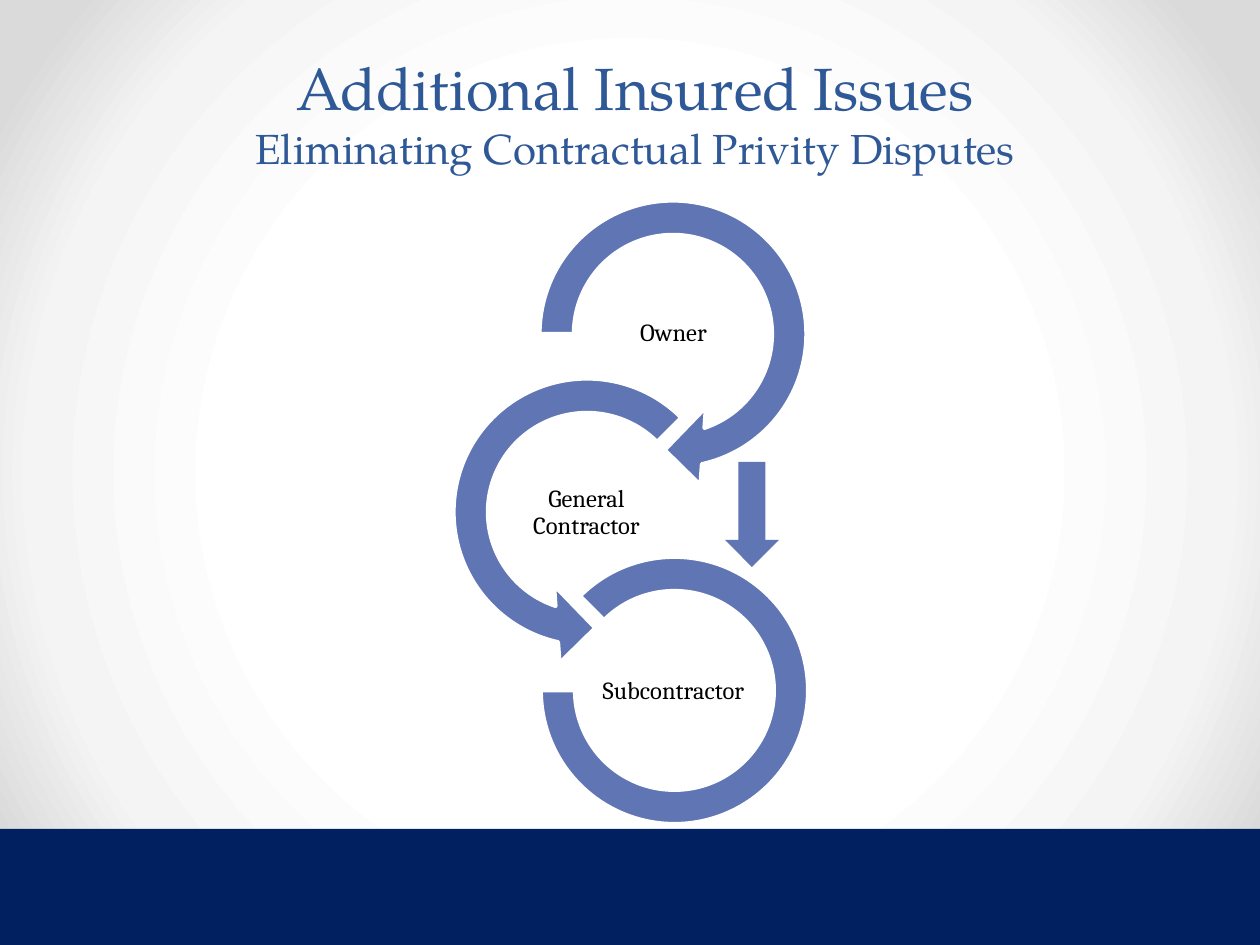
from lxml.etree import SubElement
from pptx import Presentation
from pptx.dml.color import RGBColor
from pptx.enum.shapes import MSO_SHAPE as Shape
from pptx.enum.text import MSO_ANCHOR as Anchor, PP_ALIGN as Align
from pptx.oxml.ns import qn
from pptx.util import Pt

EMU_PER_PX = 914400 / 126
NAVY = RGBColor(0x00, 0x20, 0x60)
TITLE_BLUE = RGBColor(0x2F, 0x58, 0x97)
ARROW_BLUE = RGBColor(0x60, 0x76, 0xB4)
WHITE = RGBColor(0xFF, 0xFF, 0xFF)
BLACK = RGBColor(0x00, 0x00, 0x00)
PALE_GRAY = RGBColor(0xF4, 0xF4, 0xF4)
GRAY = RGBColor(0xDA, 0xDA, 0xDA)


def px(length):
    return round(length * EMU_PER_PX)


class SlideBuilder:
    title_font = "TeX Gyre Pagella"
    label_font = "Cambria"

    def __init__(self, page):
        self.page = page

    def radial_background(self, stops):
        self.page.background.fill.gradient()
        gradient = self.page.element.find(".//" + qn("a:gradFill"))
        for child in list(gradient):
            gradient.remove(child)
        stop_list = SubElement(gradient, qn("a:gsLst"))
        for percent, color in stops:
            stop = SubElement(stop_list, qn("a:gs"), pos=str(percent * 1000))
            SubElement(stop, qn("a:srgbClr"), val=str(color))
        circle = SubElement(gradient, qn("a:path"), path="circle")
        SubElement(circle, qn("a:fillToRect"),
                   {side: "50000" for side in ("l", "t", "r", "b")})

    def shape(self, kind, left, top, width, height, fill, adjustments=(), outlined=False):
        shape = self.page.shapes.add_shape(kind, px(left), px(top), px(width), px(height))
        shape.shadow.inherit = False
        shape.fill.solid()
        shape.fill.fore_color.rgb = fill
        if outlined:
            shape.line.color.rgb = WHITE
            shape.line.width = Pt(2.25)
        else:
            shape.line.fill.background()
        for index, value in enumerate(adjustments):
            shape.adjustments[index] = value

    def text(self, words, left, top, width, height, font, sizes, color,
             anchor=Anchor.MIDDLE, margin=None, spacing=None):
        box = self.page.shapes.add_textbox(px(left), px(top), px(width), px(height))
        frame = box.text_frame
        frame.word_wrap = True
        frame.vertical_anchor = anchor
        if margin is not None:
            frame.margin_left = frame.margin_right = px(margin)
            frame.margin_top = frame.margin_bottom = px(margin)
        para = frame.paragraphs[0]
        para.text = words
        para.alignment = Align.CENTER
        para.line_spacing = spacing
        for span, size in zip(para.runs, sizes):
            span.font.name = font
            span.font.size = Pt(size)
            span.font.color.rgb = color

    def title(self, words, left, top, width, height):
        # A vertical tab is a line break within the paragraph
        self.text(words, left, top, width, height, self.title_font, (34, 24),
                  TITLE_BLUE, anchor=Anchor.BOTTOM)

    def label(self, words, left, top):
        self.text(words, left, top, 173, 86, self.label_font, (14,), BLACK,
                  margin=1, spacing=0.9)


def main():
    deck = Presentation()
    deck.slide_width, deck.slide_height = px(1260), px(945)
    builder = SlideBuilder(deck.slides.add_slide(deck.slide_layouts[6]))

    # Background and footer band
    builder.radial_background([(50, WHITE), (76, PALE_GRAY), (92, GRAY)])
    builder.shape(Shape.RECTANGLE, 0, 829, 1260, 116, NAVY)

    # Title
    builder.title("Additional Insured Issues\vEliminating Contractual Privity Disputes",
                  73, 32, 1124, 147)

    # Chain of circular arrows, each with its party
    links = [
        ("Owner", 587, 291, Shape.CIRCULAR_ARROW, 518, 179, 310,
         (0.11, 11.42, 45, 108, 0.125)),
        ("General Contractor", 500, 470, Shape.LEFT_CIRCULAR_ARROW, 432, 357, 310,
         (0.11, 11.42, 63, 189, 0.125)),
        ("Subcontractor", 587, 649, Shape.BLOCK_ARC, 541, 557, 267,
         (135, 108, 0.127)),
    ]
    for party, text_left, text_top, kind, left, top, size, adjustments in links:
        builder.shape(kind, left, top, size, size, ARROW_BLUE, adjustments, outlined=True)
        builder.label(party, text_left, text_top)

    # Direct arrow from owner to subcontractor
    builder.shape(Shape.DOWN_ARROW, 725, 462, 54, 105, ARROW_BLUE)

    deck.save("out.pptx")


if __name__ == "__main__":
    main()
